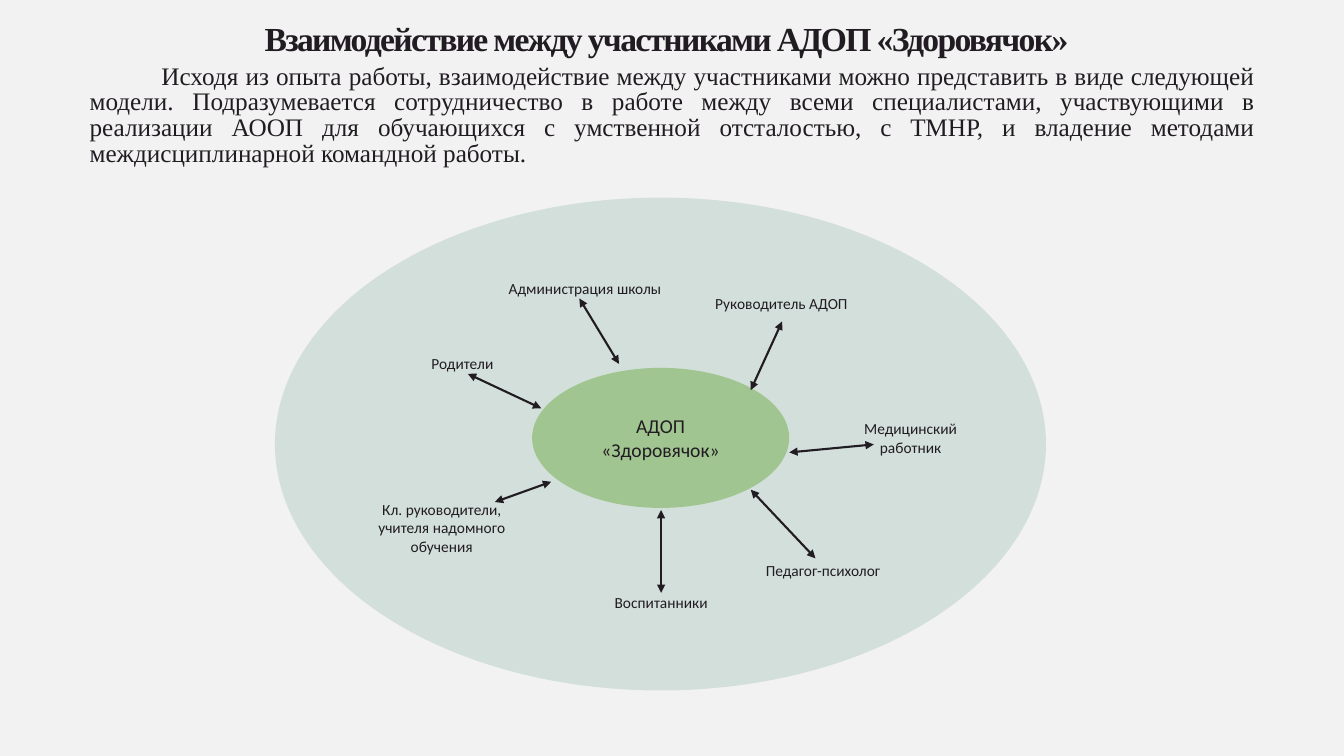
from lxml import etree
from pptx import Presentation
from pptx import util as u
from pptx.dml.color import RGBColor
from pptx.enum import shapes, text
from pptx.oxml.ns import qn

# Label, its box (left, top, width, height), its arrow (x1, y1, x2, y2), in cm
ROLES = [
    ("Родители", (9.75, 8.53, 3.81, 1.27), (11.79, 9.42, 13.64, 10.29)),
    ("Кл. руководители, учителя надомного обучения",
     (8.71, 12.14, 4.85, 2.31), (13.89, 12.14, 12.47, 12.65)),
    ("Администрация школы", (12.22, 6.48, 5.05, 1.55), (14.6, 7.52, 15.6, 9.17)),
    ("Воспитанники", (14.76, 14.55, 3.81, 1.27), (16.66, 12.85, 16.66, 14.94)),
    ("Педагог-психолог", (18.42, 13.74, 4.65, 1.27), (18.92, 12.34, 20.55, 14.07)),
    ("Руководитель АДОП", (17.37, 6.88, 4.65, 1.55), (19.71, 8.1, 18.92, 9.83)),
    ("Медицинский\nработник", (20.55, 10.26, 4.8, 1.55), (19.89, 11.4, 22.02, 11.2)),
]


def color(code):
    return RGBColor.from_string(code)


def lengths(*values):
    return [u.Cm(v) for v in values]


class Board:
    ink = "211C22"
    serif = "Times New Roman"
    sans = "Calibri"

    def __init__(self, slide):
        self.slide = slide
        fill = slide.background.fill
        fill.solid()
        fill.fore_color.rgb = color("F2F2F2")

    def letter(self, shape, words, size, font, align=text.PP_ALIGN.CENTER,
               anchor=text.MSO_ANCHOR.MIDDLE, bold=False, lead=None):
        """Fill a shape with styled text and return its first paragraph."""
        frame = shape.text_frame
        frame.word_wrap = True
        frame.vertical_anchor = anchor
        frame.text = words
        for par in frame.paragraphs:
            par.alignment = align
            par.line_spacing = lead
            for run in par.runs:
                run.font.size = u.Pt(size)
                run.font.name = font
                run.font.bold = bold
                run.font.color.rgb = color(self.ink)
        return frame.paragraphs[0]

    def label(self, words, box, size=11, font=sans, **style):
        shape = self.slide.shapes.add_textbox(*lengths(*box))
        return self.letter(shape, words, size, font, **style)

    def oval(self, box, fill):
        """Draw a half-transparent ellipse without an outline."""
        shape = self.slide.shapes.add_shape(shapes.MSO_SHAPE.OVAL, *lengths(*box))
        shape.shadow.inherit = False
        shape.fill.solid()
        shape.fill.fore_color.rgb = color(fill)
        shape.line.fill.background()
        tone = shape._element.spPr.find(qn("a:solidFill"))[0]
        etree.SubElement(tone, qn("a:alpha"), val="50000")
        return shape

    def arrow(self, ends):
        """Draw a line with a head at both ends."""
        line = self.slide.shapes.add_connector(
            shapes.MSO_CONNECTOR.STRAIGHT, *lengths(*ends))
        line.line.color.rgb = color(self.ink)
        line.line.width = u.Pt(1.5)
        props = line._element.spPr
        pen = props.find(qn("a:ln"))
        for tag in ("a:headEnd", "a:tailEnd"):
            etree.SubElement(pen, qn(tag), type="triangle")
        etree.SubElement(props, qn("a:effectLst"))


def main():
    deck = Presentation()
    deck.slide_width, deck.slide_height = lengths(33.87, 19.05)
    board = Board(deck.slides.add_slide(deck.slide_layouts[6]))

    title = board.label("Взаимодействие между участниками АДОП «Здоровячок»",
                        (1.83, 0.41, 29.92, 1.24), 24, board.serif,
                        bold=True, lead=0.85)
    title.runs[0]._r.get_or_add_rPr().set("spc", "-120")

    intro = board.label(
        "Исходя из опыта работы, взаимодействие между участниками можно "
        "представить в виде следующей модели. Подразумевается сотрудничество "
        "в работе между всеми специалистами, участвующими в реализации АООП "
        "для обучающихся с умственной отсталостью, с ТМНР, и владение "
        "методами междисциплинарной командной работы.",
        (2.01, 1.5, 29.87, 16.89), 18, board.serif,
        align=text.PP_ALIGN.JUSTIFY, anchor=text.MSO_ANCHOR.TOP, lead=0.85)
    intro._p.get_or_add_pPr().set("indent", str(u.Cm(1.81)))

    board.oval((6.93, 4.98, 19.43, 12.42), "B5CDC4")
    core = board.oval((13.41, 9.27, 6.48, 3.53), "70AD47")
    board.letter(core, "АДОП\n«Здоровячок»", 14, board.sans)

    for words, box, ends in ROLES:
        board.label(words, box)
        board.arrow(ends)

    deck.save("out.pptx")


if __name__ == "__main__":
    main()
